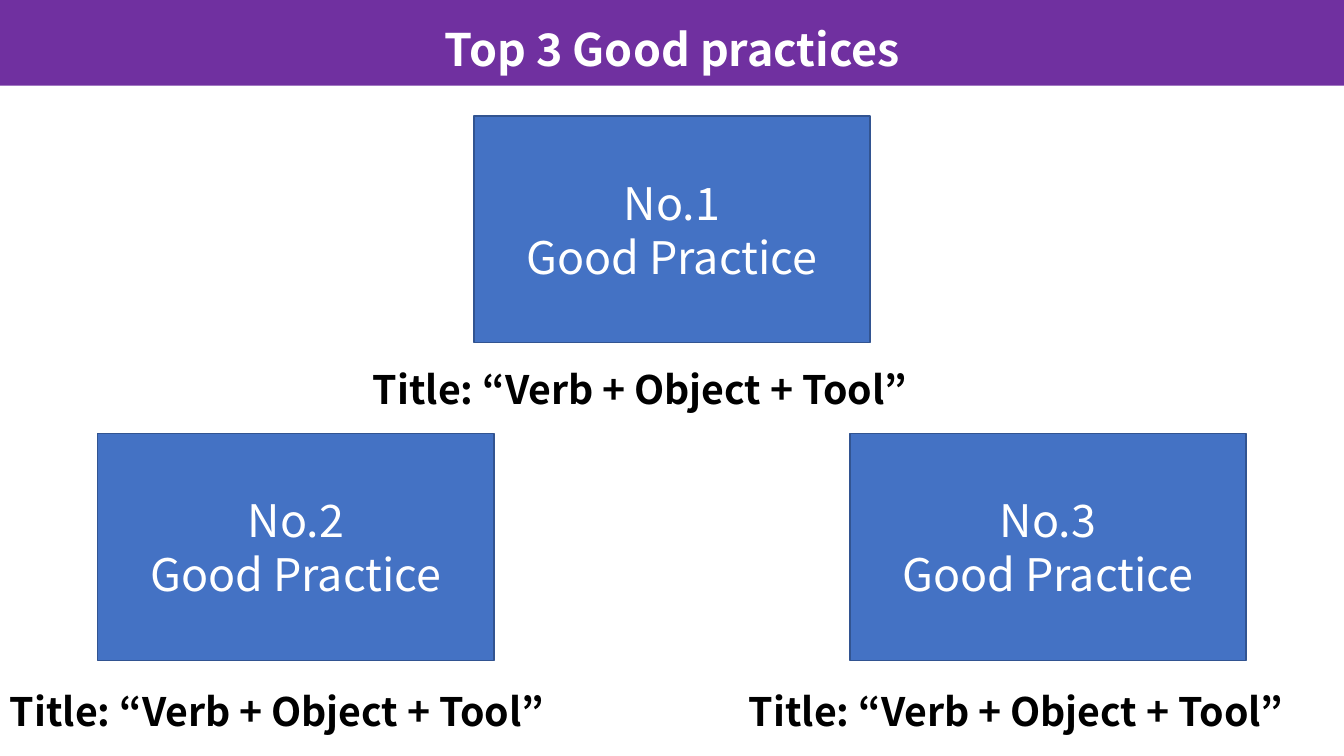
from dataclasses import dataclass

from pptx import Presentation
from pptx import util as u
from pptx.dml.color import RGBColor
from pptx.enum import shapes, text


@dataclass(frozen=True)
class Theme:
    font: str = "Noto Sans CJK JP"
    band: str = "7030A0"
    card: str = "4472C4"
    card_line: str = "325491"
    light: str = "FFFFFF"
    dark: str = "000000"
    heading_size: int = 32
    caption_size: int = 28


THEME = Theme()
WIDTH, HEIGHT = 13.33, 7.5
CARD_WIDTH, CARD_HEIGHT = 3.93, 2.25
CAPTION_WIDTH, CAPTION_HEIGHT = 6.14, 0.57
CAPTION = "Title: “Verb + Object + Tool”"

# Card left, card top, caption left, caption top
PRACTICES = [
    ((WIDTH - CARD_WIDTH) / 2, 1.15, 3.6, 3.58),
    (0.97, 4.3, 0, 6.77),
    (8.43, 4.3, 7.33, 6.77),
]


def inches(*lengths):
    return [u.Inches(length) for length in lengths]


def write(shape, lines, size, color, bold=False, align=text.PP_ALIGN.CENTER,
          anchor=text.MSO_ANCHOR.MIDDLE):
    """Put one paragraph per line into a shape and format it."""
    frame = shape.text_frame
    frame.text = "\n".join(lines)
    frame_format = {"word_wrap": True, "vertical_anchor": anchor,
                    "auto_size": text.MSO_AUTO_SIZE.NONE}
    for name, value in frame_format.items():
        setattr(frame, name, value)
    font_format = {"name": THEME.font, "size": u.Pt(size), "bold": bold}
    for paragraph in frame.paragraphs:
        paragraph.alignment = align
        for run in paragraph.runs:
            for name, value in font_format.items():
                setattr(run.font, name, value)
            run.font.color.rgb = RGBColor.from_string(color)


def add_box(slide, box, fill, line=None):
    shape = slide.shapes.add_shape(shapes.MSO_SHAPE.RECTANGLE, *inches(*box))
    shape.shadow.inherit = False
    shape.fill.solid()
    shape.fill.fore_color.rgb = RGBColor.from_string(fill)
    if line:
        shape.line.color.rgb = RGBColor.from_string(line)
        shape.line.width = u.Pt(1)
    else:
        shape.line.fill.background()
    return shape


def add_header(slide, heading):
    band = add_box(slide, (0, 0, WIDTH, 0.85), THEME.band)
    title = slide.shapes.title
    placement = zip(("left", "top", "width", "height"),
                    inches(0.78, 0.16, 11.78, 0.64))
    for name, value in placement:
        setattr(title, name, value)
    write(title, [heading], THEME.heading_size, THEME.light, bold=True)
    # The band lies behind the title
    title.element.addprevious(band.element)


def add_practice(slide, number, left, top, caption_left, caption_top):
    card = add_box(slide, (left, top, CARD_WIDTH, CARD_HEIGHT),
                   THEME.card, THEME.card_line)
    write(card, [f"No.{number}", "Good Practice"],
          THEME.heading_size, THEME.light)
    caption = slide.shapes.add_textbox(
        *inches(caption_left, caption_top, CAPTION_WIDTH, CAPTION_HEIGHT))
    write(caption, [CAPTION], THEME.caption_size, THEME.dark, bold=True,
          align=text.PP_ALIGN.LEFT, anchor=text.MSO_ANCHOR.TOP)


def main():
    presentation = Presentation()
    presentation.slide_width, presentation.slide_height = inches(WIDTH, HEIGHT)
    title_only = presentation.slide_layouts[5]
    slide = presentation.slides.add_slide(title_only)

    # Header
    add_header(slide, "Top 3 Good practices")

    # Ranked practices with their captions
    for number, places in enumerate(PRACTICES, start=1):
        add_practice(slide, number, *places)

    presentation.save("out.pptx")


if __name__ == "__main__":
    main()
